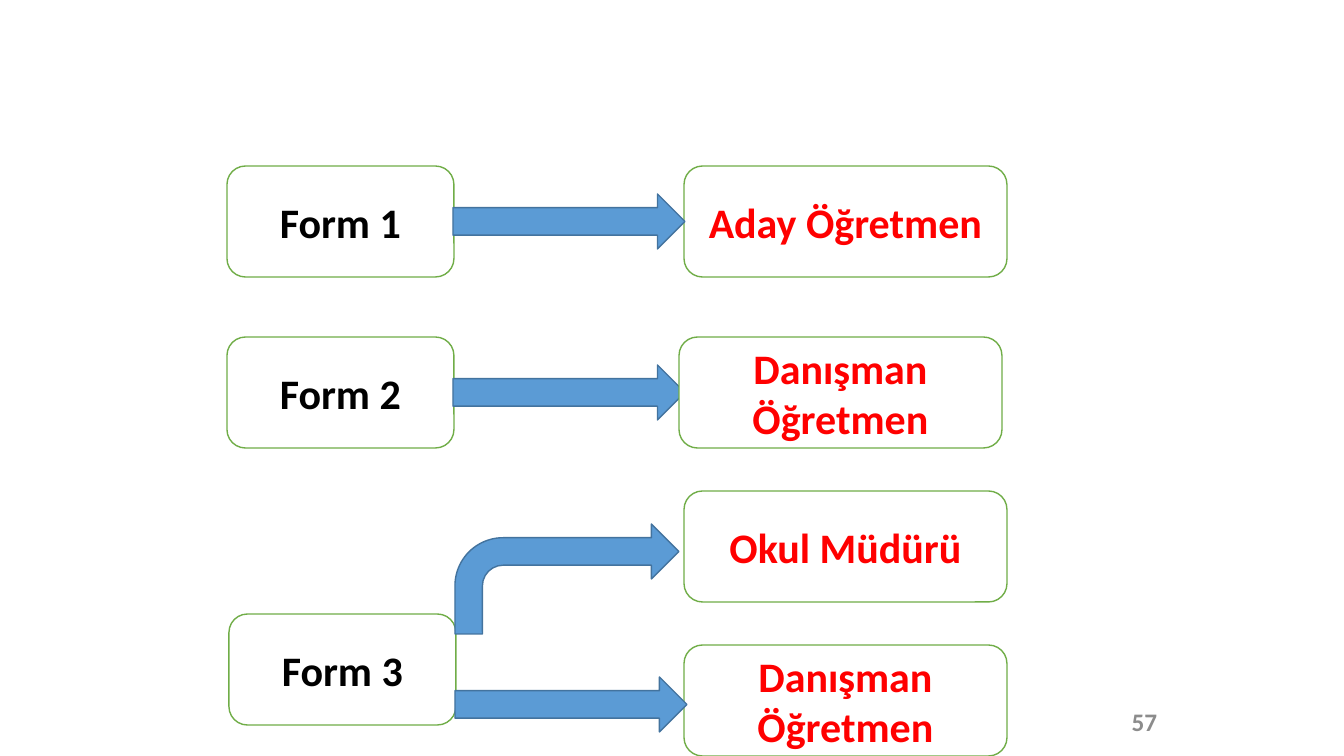
from pptx import Presentation
from pptx.dml.color import RGBColor
from pptx.enum.shapes import MSO_SHAPE
from pptx.enum.text import MSO_ANCHOR, PP_ALIGN
from pptx.util import Emu, Pt

BOX = MSO_SHAPE.ROUNDED_RECTANGLE
ARROW = MSO_SHAPE.RIGHT_ARROW
BENT = MSO_SHAPE.BENT_ARROW
MIDDLE = MSO_ANCHOR.MIDDLE
CENTER, RIGHT = PP_ALIGN.CENTER, PP_ALIGN.RIGHT

COLORS = {"white": "FFFFFF", "green": "70AD47", "blue": "5B9BD5",
          "navy": "43739E", "black": "000000", "red": "FF0000",
          "gray": "8C8C8C"}
SIZES = {"form": (227, 111), "role": (323, 111),
         "arrow": (232, 55), "bent": (224, 110)}
INK = {"form": "black", "role": "red"}

# kind, left, top, text; from back to front
PARTS = [
    ("form", 227, 166, "Form 1"),
    ("role", 684, 166, "Aday Öğretmen"),
    ("arrow", 453, 194, ""),
    ("form", 227, 337, "Form 2"),
    ("arrow", 453, 365, ""),
    ("role", 679, 337, "Danışman Öğretmen"),
    ("form", 229, 614, "Form 3"),
    ("role", 684, 491, "Okul Müdürü"),
    ("role", 684, 645, "Danışman Öğretmen"),
    ("bent", 455, 524, ""),
    ("arrow", 455, 677, ""),
]
PAGE = "57"


def px(n):
    return Emu(round(n * 914400 / 100.8))


def rgb(name):
    return RGBColor.from_string(COLORS[name])


def write(shape, text, size, color, align):
    frame = shape.text_frame
    frame.word_wrap = True
    frame.vertical_anchor = MIDDLE
    para = frame.paragraphs[0]
    para.text = text
    para.alignment = align
    font = para.runs[0].font
    font.name, font.size, font.bold = "Calibri", Pt(size), True
    font.color.rgb = rgb(color)


def draw(slide, kind, left, top, text):
    preset = {"arrow": ARROW, "bent": BENT}.get(kind, BOX)
    fill, line = ("white", "green") if preset == BOX else ("blue", "navy")
    shape = slide.shapes.add_shape(
        preset, px(left), px(top), *map(px, SIZES[kind]))
    shape.shadow.inherit = False
    shape.fill.solid()
    shape.fill.fore_color.rgb = rgb(fill)
    shape.line.color.rgb = rgb(line)
    shape.line.width = Pt(1)
    if text:
        write(shape, text, 30, INK[kind], CENTER)


def main():
    prs = Presentation()
    prs.slide_width, prs.slide_height = px(1344), px(756)
    slide = prs.slides.add_slide(prs.slide_layouts[6])
    for part in PARTS:
        draw(slide, *part)
    page = slide.shapes.add_textbox(px(865), px(701), px(302), px(40))
    write(page, PAGE, 18, "gray", RIGHT)
    prs.save("out.pptx")


if __name__ == "__main__":
    main()
